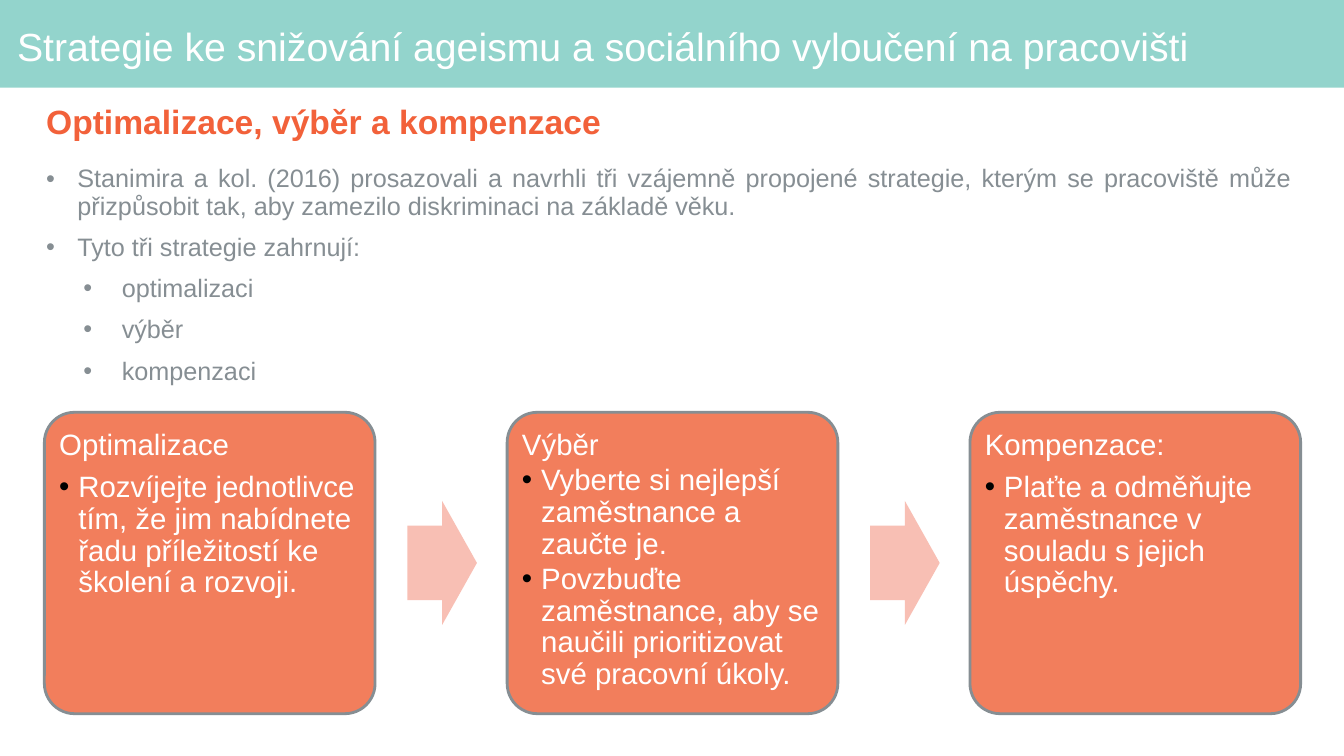
from dataclasses import dataclass

import lxml.etree
import pptx
import pptx.dml.color
import pptx.enum.shapes
import pptx.enum.text
import pptx.oxml.ns
import pptx.util

Inches = pptx.util.Inches
Pt = pptx.util.Pt
SHAPE = pptx.enum.shapes.MSO_SHAPE
ALIGN = pptx.enum.text.PP_ALIGN
ANCHOR = pptx.enum.text.MSO_ANCHOR

COLORS = {
    "band": "93D4CC",
    "white": "FFFFFF",
    "heading": "F2613A",
    "grey": "868E93",
    "card": "F27E5C",
    "arrow": "F8BFB4",
    "black": "000000",
}
CARD_LEFT, CARD_TOP, CARD_W, CARD_H = 0.44, 4.09, 3.28, 2.99
CARD_STEP = 4.59
ARROW_OFFSET, ARROW_TOP, ARROW_W, ARROW_H = 3.6, 4.97, 0.69, 1.23


@dataclass
class Style:
    """Look of a paragraph; indents in inches, space before in points."""
    size: float
    color: str
    bold: bool = False
    align: ALIGN = ALIGN.LEFT
    before: float = 0
    margin: float = 0
    indent: float = 0
    bullet: str = ""


@dataclass
class Line:
    text: str
    style: Style


@dataclass
class Card:
    title: str
    points: list[str]
    before: float


TITLE = Style(28, "white")
HEADING = Style(24, "heading", True, ALIGN.JUSTIFY, 10, 0.5, -0.25)
BODY = Style(18, "grey", False, ALIGN.JUSTIFY, 10, 0.56, -0.31, "grey")
SUB_BODY = Style(18, "grey", False, ALIGN.JUSTIFY, 10, 1, -0.38, "grey")

BODY_LINES = [
    Line("Stanimira a kol. (2016) prosazovali a navrhli tři vzájemně propojené strategie, "
         "kterým se pracoviště může přizpůsobit tak, aby zamezilo diskriminaci na základě věku.",
         BODY),
    Line("Tyto tři strategie zahrnují:", BODY),
    *(Line(name, SUB_BODY) for name in ("optimalizaci", "výběr", "kompenzaci")),
]
CARDS = [
    Card("Optimalizace",
         ["Rozvíjejte jednotlivce tím, že jim nabídnete řadu příležitostí ke školení a rozvoji."],
         7.3),
    Card("Výběr",
         ["Vyberte si nejlepší zaměstnance a zaučte je.",
          "Povzbuďte zaměstnance, aby se naučili prioritizovat své pracovní úkoly."],
         2.4),
    Card("Kompenzace:",
         ["Plaťte a odměňujte zaměstnance v souladu s jejich úspěchy."],
         7.3),
]


def rgb(name: str) -> pptx.dml.color.RGBColor:
    return pptx.dml.color.RGBColor.from_string(COLORS[name])


def add_bullet(p, color: str) -> None:
    qn = pptx.oxml.ns.qn
    pPr = p._p.get_or_add_pPr()
    clr = lxml.etree.SubElement(pPr, qn("a:buClr"))
    lxml.etree.SubElement(clr, qn("a:srgbClr"), val=COLORS[color])
    lxml.etree.SubElement(pPr, qn("a:buFont"), typeface="Arial")
    lxml.etree.SubElement(pPr, qn("a:buChar"), char="•")


def write(tf, lines: list[Line], inset_x: float, inset_y: float, anchor: ANCHOR) -> None:
    tf.word_wrap = True
    tf.vertical_anchor = anchor
    tf.margin_left = tf.margin_right = Inches(inset_x)
    tf.margin_top = tf.margin_bottom = Inches(inset_y)
    tf.text = "\n".join(line.text for line in lines)
    for p, line in zip(tf.paragraphs, lines):
        style = line.style
        p.alignment = style.align
        p.line_spacing = 0.9
        p.space_before = Pt(style.before)
        pPr = p._p.get_or_add_pPr()
        pPr.set("marL", str(Inches(style.margin)))
        pPr.set("indent", str(Inches(style.indent)))
        if style.bullet:
            add_bullet(p, style.bullet)
        font = p.runs[0].font
        font.name = "Arial"
        font.size = Pt(style.size)
        font.bold = style.bold
        font.color.rgb = rgb(style.color)


def add_text(s, box: tuple[float, ...], lines: list[Line], inset_x: float = 0.1,
             inset_y: float = 0.05, anchor: ANCHOR = ANCHOR.TOP) -> None:
    sp = s.shapes.add_textbox(*map(Inches, box))
    write(sp.text_frame, lines, inset_x, inset_y, anchor)


def add_filled(s, kind: SHAPE, box: tuple[float, ...], color: str):
    sp = s.shapes.add_shape(kind, *map(Inches, box))
    sp.shadow.inherit = False
    sp.fill.solid()
    sp.fill.fore_color.rgb = rgb(color)
    sp.line.fill.background()
    return sp


def add_card(s, card: Card, left: float) -> None:
    sp = add_filled(s, SHAPE.ROUNDED_RECTANGLE, (left, CARD_TOP, CARD_W, CARD_H), "card")
    sp.adjustments[0] = 0.1
    sp.line.color.rgb = rgb("grey")
    sp.line.width = Pt(2)
    title = Style(21, "white", before=card.before)
    point = Style(21, "white", before=card.before, margin=0.19, indent=-0.19, bullet="black")
    lines = [Line(card.title, title), *(Line(text, point) for text in card.points)]
    write(sp.text_frame, lines, 0.06, 0.09, ANCHOR.TOP)


def add_arrow(s, left: float) -> None:
    sp = add_filled(s, SHAPE.RIGHT_ARROW, (left, ARROW_TOP, ARROW_W, ARROW_H), "arrow")
    sp.adjustments[0] = 0.6
    sp.adjustments[1] = 0.5


def main() -> None:
    prs = pptx.Presentation()
    prs.slide_width, prs.slide_height = Inches(13.33), Inches(7.5)
    s = prs.slides.add_slide(prs.slide_layouts[6])

    add_filled(s, SHAPE.RECTANGLE, (0, 0, 13.33, 0.87), "band")
    add_text(s, (0.11, 0.09, 13.06, 0.78),
             [Line("Strategie ke snižování ageismu a sociálního vyloučení na pracovišti", TITLE)],
             0.06, 0.06, ANCHOR.MIDDLE)
    add_text(s, (0.11, 0.93, 13.06, 0.6),
             [Line("Optimalizace, výběr a kompenzace", HEADING)], anchor=ANCHOR.MIDDLE)
    add_text(s, (0.11, 1.6, 12.8, 2.4), BODY_LINES)

    for i, card in enumerate(CARDS):
        left = CARD_LEFT + i * CARD_STEP
        add_card(s, card, left)
        if i < len(CARDS) - 1:
            add_arrow(s, left + ARROW_OFFSET)

    prs.save("out.pptx")


if __name__ == "__main__":
    main()
